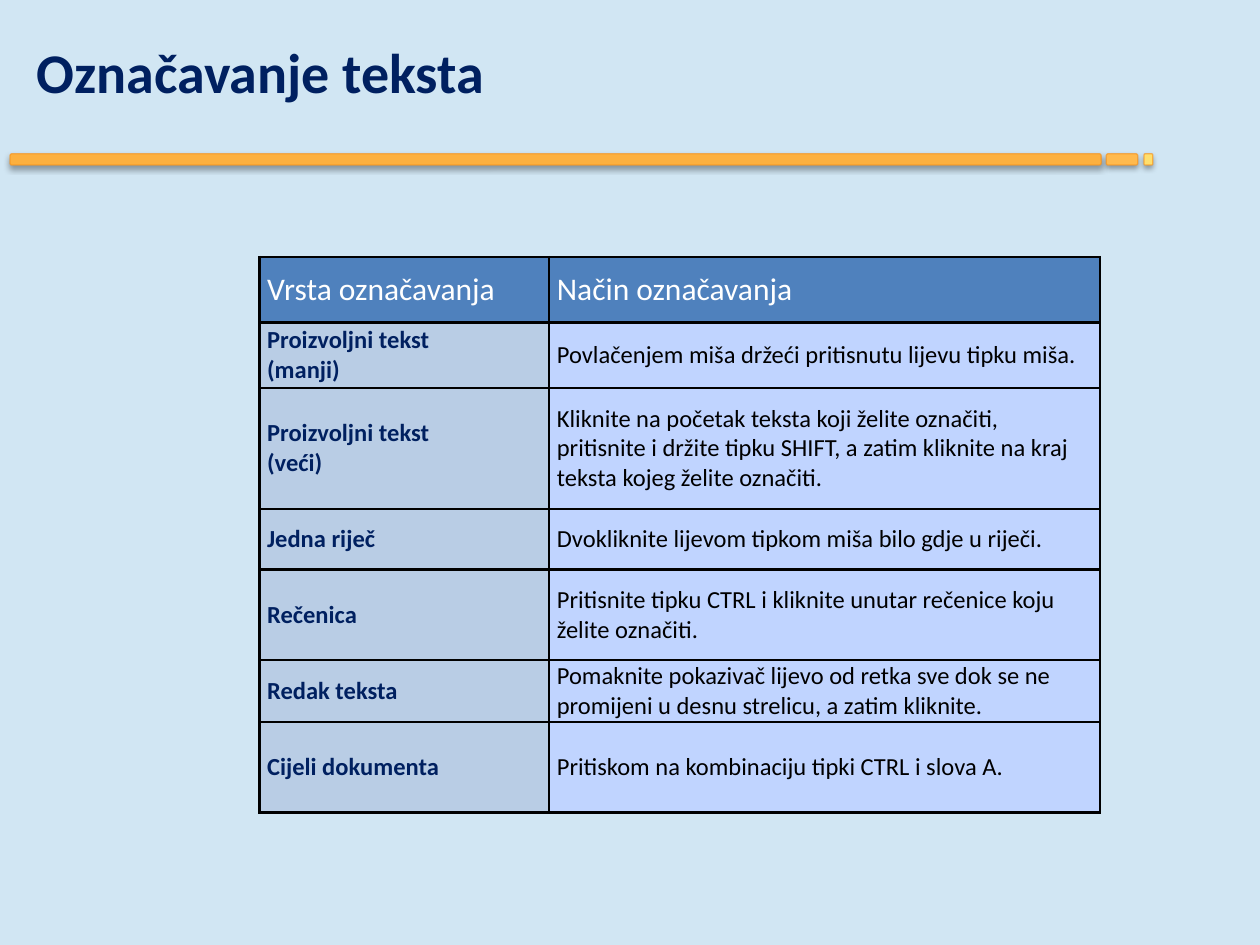
from dataclasses import dataclass

from lxml import etree
from pptx import Presentation
from pptx.dml.color import RGBColor
from pptx.enum.shapes import MSO_SHAPE
from pptx.enum.text import MSO_ANCHOR, PP_ALIGN
from pptx.oxml.ns import qn
from pptx.util import Inches, Pt

ROUNDED = MSO_SHAPE.ROUNDED_RECTANGLE
TOP, MIDDLE = MSO_ANCHOR.TOP, MSO_ANCHOR.MIDDLE
LEFT = PP_ALIGN.LEFT


@dataclass(frozen=True)
class Theme:
    font: str = "Calibri"
    background: str = "D1E6F3"
    navy: str = "002060"
    white: str = "FFFFFF"
    black: str = "000000"
    header_fill: str = "4F81BD"
    label_fill: str = "B9CDE5"
    body_fill: str = "C0D4FF"
    bar_line: str = "F7941D"
    title_size: int = 32
    header_size: int = 18
    body_size: int = 14


def add_color(parent, color, opacity=100):
    fill = etree.SubElement(parent, qn("a:srgbClr"), val=color)
    if opacity < 100:
        etree.SubElement(fill, qn("a:alpha"), val=str(opacity * 1000))


class SlideBuilder:
    def __init__(self, page, theme):
        self.page = page
        self.theme = theme
        background = page.background.fill
        background.solid()
        background.fore_color.rgb = RGBColor.from_string(theme.background)

    def style(self, para, size, color, bold=False):
        para.alignment = LEFT
        para.font.name = self.theme.font
        para.font.size = Pt(size)
        para.font.bold = bold
        para.font.color.rgb = RGBColor.from_string(color)

    def title(self, text, left, top, width, height):
        box = self.page.shapes.title
        box.left, box.top = Inches(left), Inches(top)
        box.width, box.height = Inches(width), Inches(height)
        box.text_frame.text = text
        box.text_frame.vertical_anchor = TOP
        self.style(box.text_frame.paragraphs[0], self.theme.title_size,
                   self.theme.navy, bold=True)

    def bar(self, left, top, width, height, color):
        """Add a rounded bar with a translucent outline and a soft shadow below."""
        bar = self.page.shapes.add_shape(
            ROUNDED, Inches(left), Inches(top), Inches(width), Inches(height))
        bar.fill.solid()
        bar.fill.fore_color.rgb = RGBColor.from_string(color)
        bar.line.width = Pt(0.75)
        bar.line.fill.solid()
        bar.line.color.rgb = RGBColor.from_string(self.theme.bar_line)
        line_color = bar.line._get_or_add_ln().find(".//" + qn("a:srgbClr"))
        etree.SubElement(line_color, qn("a:alpha"), val="65000")
        bar.shadow.inherit = False
        effects = bar._element.spPr.find(qn("a:effectLst"))
        shadow = etree.SubElement(
            effects, qn("a:outerShdw"), blurRad=str(Pt(3.1)), dist=str(Pt(1.8)),
            dir="5400000", rotWithShape="0")
        add_color(shadow, self.theme.black, 35)

    def border(self, cell):
        properties = cell._tc.get_or_add_tcPr()
        for index, side in enumerate(("lnL", "lnR", "lnT", "lnB")):
            line = etree.Element(qn("a:" + side), w=str(Pt(1.5)))
            add_color(etree.SubElement(line, qn("a:solidFill")), self.theme.black)
            properties.insert(index, line)

    def cell(self, cell, text, fill, size, color, bold):
        cell.text = text
        cell.vertical_anchor = MIDDLE
        cell.margin_left = cell.margin_right = Inches(0.06)
        cell.margin_top = cell.margin_bottom = 0
        cell.fill.solid()
        cell.fill.fore_color.rgb = RGBColor.from_string(fill)
        for para in cell.text_frame.paragraphs:
            self.style(para, size, color, bold)
        self.border(cell)

    def table(self, rows, left, top, widths, heights):
        """Add a table with a header row and a bold label column."""
        theme = self.theme
        table = self.page.shapes.add_table(
            len(rows), len(widths), Inches(left), Inches(top),
            Inches(sum(widths)), Inches(sum(heights))).table
        for column, width in zip(table.columns, widths):
            column.width = Inches(width)
        header = (theme.header_fill, theme.header_size, theme.white, False)
        label = (theme.label_fill, theme.body_size, theme.navy, True)
        body = (theme.body_fill, theme.body_size, theme.black, False)
        for r, (texts, height) in enumerate(zip(rows, heights)):
            table.rows[r].height = Inches(height)
            looks = (label, body) if r else (header, header)
            for c, (text, look) in enumerate(zip(texts, looks)):
                self.cell(table.cell(r, c), text, *look)


BARS = [(0.08, 8.66, "FCB03F"), (8.78, 0.25, "FFBA4E"), (9.08, 0.07, "FFDF6D")]
SELECTION_METHODS = [
    ("Vrsta označavanja", "Način označavanja"),
    ("Proizvoljni tekst\n(manji)",
     "Povlačenjem miša držeći pritisnutu lijevu tipku miša."),
    ("Proizvoljni tekst\n(veći)",
     "Kliknite na početak teksta koji želite označiti, pritisnite i držite "
     "tipku SHIFT, a zatim kliknite na kraj teksta kojeg želite označiti."),
    ("Jedna riječ", "Dvokliknite lijevom tipkom miša bilo gdje u riječi."),
    ("Rečenica",
     "Pritisnite tipku CTRL i kliknite unutar rečenice koju želite označiti."),
    ("Redak teksta",
     "Pomaknite pokazivač lijevo od retka sve dok se ne promijeni u desnu "
     "strelicu, a zatim kliknite."),
    ("Cijeli dokumenta", "Pritiskom na kombinaciju tipki CTRL i slova A."),
]


def main():
    deck = Presentation()
    deck.slide_width, deck.slide_height = Inches(10), Inches(7.5)
    title_only = deck.slide_layouts[5]
    builder = SlideBuilder(deck.slides.add_slide(title_only), Theme())
    for left, width, color in BARS:
        builder.bar(left, 1.22, width, 0.09, color)
    builder.title("Označavanje teksta", 0.19, 0.25, 9, 1.01)
    builder.table(SELECTION_METHODS, 2.06, 2.04, widths=(2.3, 4.37),
                  heights=(0.52, 0.52, 0.96, 0.48, 0.72, 0.49, 0.72))
    deck.save("out.pptx")


if __name__ == "__main__":
    main()
